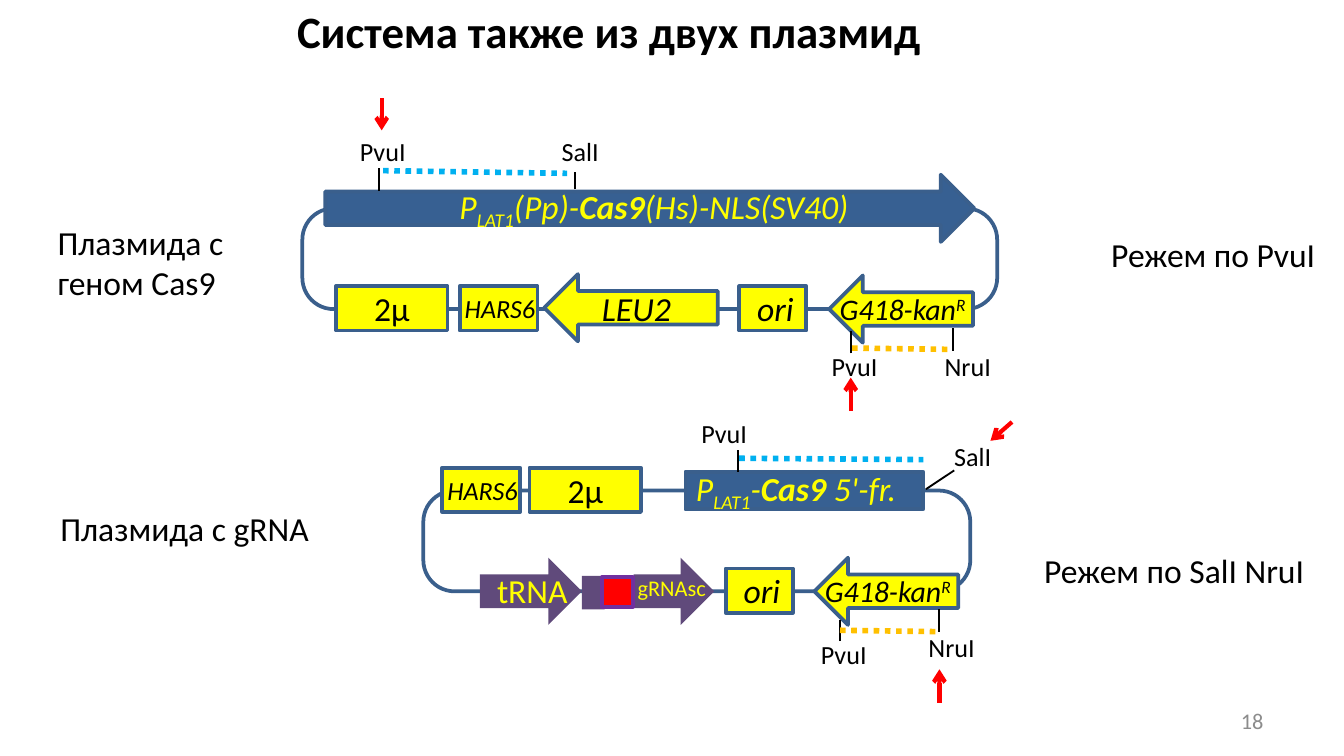
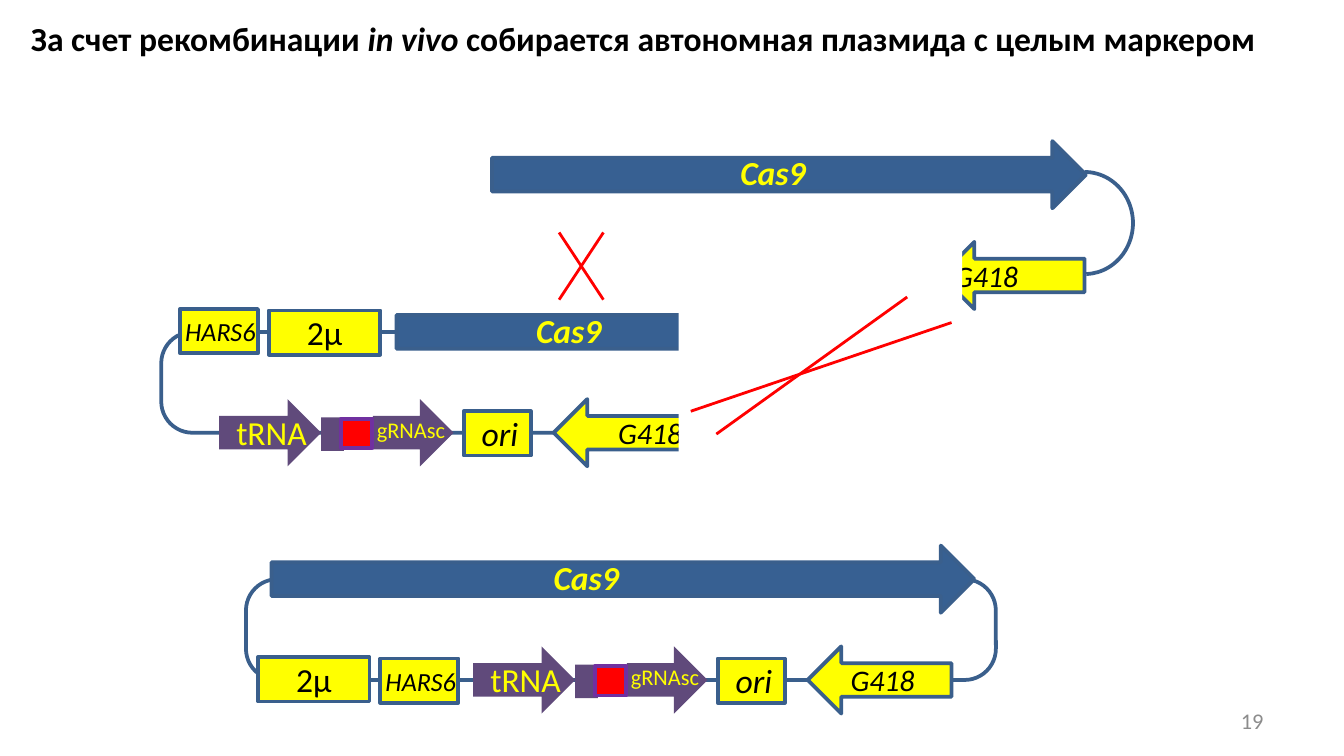
from typing import NamedTuple, Optional

from lxml.etree import SubElement
from pptx import Presentation
from pptx.dml.color import RGBColor
from pptx.enum.dml import MSO_LINE
from pptx.enum.shapes import MSO_CONNECTOR, MSO_SHAPE
from pptx.enum.text import MSO_ANCHOR, MSO_AUTO_SIZE, PP_ALIGN
from pptx.oxml.ns import qn
from pptx.util import Inches, Pt

# The slide is a grid of 100 columns by 56.25 rows; all lengths count its cells.
COLUMNS, ROWS = 100, 56.25
CELL = Inches(10) / COLUMNS

FONT = "Calibri"
BLACK = RGBColor(0x00, 0x00, 0x00)
WHITE = RGBColor(0xFF, 0xFF, 0xFF)
GREY = RGBColor(0x8C, 0x8C, 0x8C)
RED = RGBColor(0xFF, 0x00, 0x00)
YELLOW = RGBColor(0xFF, 0xFF, 0x00)
BLUE = RGBColor(0x37, 0x60, 0x92)
OUTLINE = RGBColor(0x3A, 0x5F, 0x8C)
PURPLE = RGBColor(0x60, 0x4A, 0x7B)
VIOLET = RGBColor(0x70, 0x30, 0xA0)
SKY = RGBColor(0x00, 0xB0, 0xF0)
ORANGE = RGBColor(0xFF, 0xC0, 0x00)

ARROW_HEIGHT = 5
BOX_HEIGHT = 3.3
RING_HEIGHT = 7.5
SITE_WIDTHS = {"PvuI": 5.5, "NruI": 5.5, "SalI": 4.8}


class Run(NamedTuple):
    text: str
    bold: Optional[bool] = None
    italic: Optional[bool] = None
    baseline: int = 0  # percent, negative for subscript


def cells(*counts):
    return [round(count * CELL) for count in counts]


def write(frame, text, size, color=BLACK, bold=False, italic=False, align=PP_ALIGN.LEFT):
    """Fill a frame's paragraph with a string or a list of Runs."""
    paragraph = frame.paragraphs[0]
    paragraph.alignment = align
    font = paragraph.font
    font.name, font.size, font.bold, font.italic = FONT, Pt(size), bold, italic
    font.color.rgb = color
    for part in [Run(text)] if isinstance(text, str) else text:
        run = paragraph.add_run()
        run.text = part.text
        run.font.bold, run.font.italic = part.bold, part.italic
        if part.baseline:
            run._r.get_or_add_rPr().set("baseline", str(part.baseline * 1000))


def add_label(slide, text, left, top, width, height=4, size=18, wrap=False, **style):
    box = slide.shapes.add_textbox(*cells(left, top, width, height))
    frame = box.text_frame
    frame.word_wrap = wrap
    frame.auto_size = MSO_AUTO_SIZE.SHAPE_TO_FIT_TEXT
    write(frame, text, size, **style)


def add_title(slide, text, left, top, width, height, size):
    title = slide.shapes.title
    title.left, title.top, title.width, title.height = cells(left, top, width, height)
    title.text_frame.vertical_anchor = MSO_ANCHOR.TOP
    title.text_frame.auto_size = MSO_AUTO_SIZE.NONE
    write(title.text_frame, text, size, bold=True)


def add_slide_number(slide, number):
    box = slide.shapes.add_textbox(*cells(71.7, 52.1, 23.3, 3))
    box.text_frame.word_wrap = True
    box.text_frame.vertical_anchor = MSO_ANCHOR.MIDDLE
    write(box.text_frame, str(number), 12, GREY, align=PP_ALIGN.RIGHT)


def add_figure(slide, preset, left, top, width, height, fill=None, line=OUTLINE):
    figure = slide.shapes.add_shape(preset, *cells(left, top, width, height))
    figure.shadow.inherit = False
    if fill is None:
        figure.fill.background()
    else:
        figure.fill.solid()
        figure.fill.fore_color.rgb = fill
    if line is None:
        figure.line.fill.background()
    else:
        figure.line.color.rgb = line
        figure.line.width = Pt(2)
    return figure


def add_line(slide, start, end, color=BLACK, width=1.0, dash=None, arrow=False):
    connector = slide.shapes.add_connector(MSO_CONNECTOR.STRAIGHT, *cells(*start, *end))
    connector.line.color.rgb = color
    connector.line.width = Pt(width)
    if dash:
        connector.line.dash_style = dash
    properties = connector._element.spPr
    if arrow:
        SubElement(properties.get_or_add_ln(), qn("a:tailEnd"), type="arrow")
    SubElement(properties, qn("a:effectLst"))


def add_ring(slide, left, top, width):
    ring = add_figure(slide, MSO_SHAPE.ROUNDED_RECTANGLE, left, top, width, RING_HEIGHT)
    ring.adjustments[0] = 0.311


def add_cas9_arrow(slide, left, top, width, text, text_left, text_width, bold=True):
    add_figure(slide, MSO_SHAPE.RIGHT_ARROW, left, top, width, ARROW_HEIGHT, BLUE)
    add_label(slide, text, text_left, top + 0.35, text_width,
              color=YELLOW, bold=bold, italic=True)


def add_two_micron(slide, left, top):
    add_figure(slide, MSO_SHAPE.RECTANGLE, left, top, 8.3, BOX_HEIGHT, YELLOW)
    add_label(slide, "2μ", left + 1.85, top - 0.35, 5.2)


def add_hars6(slide, left, top):
    add_figure(slide, MSO_SHAPE.RECTANGLE, left, top, 5.8, BOX_HEIGHT, YELLOW)
    add_label(slide, "HARS6", left - 0.6, top, 7.3, 3.4, size=14, italic=True)


def add_ori(slide, left, top):
    add_figure(slide, MSO_SHAPE.RECTANGLE, left, top, 5, BOX_HEIGHT, YELLOW)
    add_label(slide, "ori", left + 0.35, top - 0.4, 4.8, italic=True)


def add_g418(slide, left, top, text="G418", shift=0.0, text_width=6.9):
    add_figure(slide, MSO_SHAPE.LEFT_ARROW, left, top, 10.7, ARROW_HEIGHT, YELLOW)
    add_label(slide, text, left + shift, top + 0.65, text_width, 3.7, size=16, italic=True)


def add_guide_rna(slide, left, top):
    """tRNA arrow, red target segment and scaffold arrow, side by side."""
    add_figure(slide, MSO_SHAPE.RIGHT_ARROW, left, top, 7.6, ARROW_HEIGHT, PURPLE, None)
    add_figure(slide, MSO_SHAPE.RIGHT_ARROW, left + 11.45, top, 6, ARROW_HEIGHT, PURPLE, None)
    add_label(slide, "tRNA", left + 0.3, top + 0.45, 7.3, color=YELLOW)
    add_label(slide, "gRNAsc", left + 10.75, top + 0.75, 7.2, 3, size=12, color=YELLOW)
    add_figure(slide, MSO_SHAPE.RECTANGLE, left + 7.6, top + 1.35, 1.7, 2.5, PURPLE, None)
    add_figure(slide, MSO_SHAPE.RECTANGLE, left + 9.1, top + 1.45, 2.3, 2.2, RED, VIOLET)


def add_site(slide, name, left, top, tick_start, tick_end):
    """Restriction site: its name and the tick that leads to the map."""
    add_line(slide, tick_start, tick_end)
    add_label(slide, name, left, top, SITE_WIDTHS[name], 3.4, size=14)


def build_two_plasmids(slide):
    add_title(slide, "Система также из двух плазмид", 21.1, -0.2, 52, 5, 24)
    kan_marker = [Run("G418-kan"), Run("R", baseline=30)]

    # Plasmid with the Cas9 gene
    add_ring(slide, 22.5, 15.5, 51.7)
    promoter = [Run("P"), Run("LAT1", baseline=-25)]
    add_cas9_arrow(slide, 24.2, 13, 48.3,
                   promoter + [Run("(Pp)-"), Run("Cas9", bold=True), Run("(Hs)-NLS(SV40)")],
                   33.2, 32.3, bold=False)
    add_two_micron(slide, 25, 21.3)
    add_hars6(slide, 34.2, 21.3)
    add_figure(slide, MSO_SHAPE.LEFT_ARROW, 40.5, 20.4, 12.9, ARROW_HEIGHT, YELLOW)
    add_label(slide, "LEU2", 43.8, 20.9, 7.2, italic=True)
    add_ori(slide, 55, 21.3)
    add_g418(slide, 61.7, 20.5, kan_marker, -0.2, 12)

    # Plasmid with gRNA
    add_ring(slide, 31.5, 36.5, 40.7)
    add_figure(slide, MSO_SHAPE.RECTANGLE, 51, 35.1, 17.7, 2.8, BLUE)
    add_label(slide, promoter + [Run("-"), Run("Cas9 ", bold=True), Run("5'-fr.")],
              50.8, 34.3, 18.1, color=YELLOW, italic=True)
    add_hars6(slide, 32.9, 34.8)
    add_two_micron(slide, 39.4, 34.8)
    add_guide_rna(slide, 35.7, 41.5)
    add_ori(slide, 54, 42.3)
    add_g418(slide, 60.6, 41.5, kan_marker, -0.2, 12)

    for name, left, top, tick_start, tick_end in [
        ("PvuI", 25.8, 9.6, (28.2, 14.2), (28.2, 12.5)),
        ("SalI", 40.8, 9.6, (42.8, 14.1), (42.8, 12.8)),
        ("PvuI", 60.9, 25.6, (63.3, 26.3), (63.3, 24.6)),
        ("NruI", 69.3, 25.6, (70.9, 26.1), (70.9, 24.4)),
        ("PvuI", 51.2, 30.6, (54.9, 35.1), (54.9, 33.5)),
        ("SalI", 70, 32.3, (68.9, 36.4), (71, 35)),
        ("PvuI", 60.1, 47, (62.5, 47.7), (62.5, 46.1)),
        ("NruI", 68.1, 46.5, (69.9, 47), (69.9, 45.3)),
    ]:
        add_site(slide, name, left, top, tick_start, tick_end)

    cuts = [((28.4, 7.3), (28.4, 9.7)), ((63.3, 30.6), (63.3, 28.1)),
            ((69.9, 52.3), (69.9, 49.8)), ((75.3, 31.4), (73.7, 32.8))]
    for start, end in cuts:
        add_line(slide, start, end, RED, 2.25, arrow=True)

    homologies = [((28.5, 12.7), (42.2, 12.9), SKY), ((55, 34.1), (68.7, 34.2), SKY),
                  ((63.4, 25.9), (70.9, 26), ORANGE), ((62.5, 46.9), (69.9, 47), ORANGE)]
    for start, end, color in homologies:
        add_line(slide, start, end, color, 3, dash=MSO_LINE.ROUND_DOT)

    add_label(slide, "Плазмида с геном Cas9", 3.3, 16, 15, 7.1, wrap=True)
    add_label(slide, "Плазмида с gRNA", 3.5, 37.3, 22.5, wrap=True)
    add_label(slide, "Режем по PvuI", 81.7, 16.9, 17.4)
    add_label(slide, "Режем по SalI NruI", 76.7, 40.4, 21.6)


def build_recombination(slide):
    add_title(slide, [Run("За счет рекомбинации "), Run("in vivo ", italic=True),
                      Run("собирается автономная плазмида с целым маркером")],
              1.3, 0.8, 96.2, 4, 18)

    # Cut plasmid with the Cas9 gene
    add_cas9_arrow(slide, 36.6, 10.5, 44.2, "Cas9", 54.1, 7.5)
    add_g418(slide, 70, 18)
    bend = add_figure(slide, MSO_SHAPE.ARC, 77.1, 12.8, 7.2, 7.6)
    bend.adjustments[0], bend.adjustments[1] = 162, 52.85

    # Cut plasmid with gRNA
    add_ring(slide, 12, 24.7, 40.7)
    add_cas9_arrow(slide, 29.5, 22.2, 24.1, "Cas9", 38.9, 6.9)
    add_hars6(slide, 13.4, 23)
    add_two_micron(slide, 20, 23.1)
    add_guide_rna(slide, 16.3, 29.7)
    add_ori(slide, 34.5, 30.6)
    add_g418(slide, 41.2, 29.7, shift=3.8)

    # White blocks that trim the cut ends
    for left, top, width, height in [(69.1, 18.6, 2.5, 3.9), (50.5, 21.9, 4.2, 12.9)]:
        add_figure(slide, MSO_SHAPE.RECTANGLE, left, top, width, height, WHITE, None)

    crossovers = [((41.6, 17.3), (44.9, 22.3)), ((41.6, 22.3), (44.9, 17.3)),
                  ((67.5, 22.1), (53.3, 32.3)), ((51.4, 30.6), (70.8, 24))]
    for start, end in crossovers:
        add_line(slide, start, end, RED, 1.5)

    # Assembled plasmid
    add_ring(slide, 18.3, 43.1, 55.8)
    add_cas9_arrow(slide, 20.2, 40.6, 52.3, "Cas9", 40.2, 6.9)
    add_two_micron(slide, 19.2, 48.9)
    add_hars6(slide, 28.3, 49)
    add_guide_rna(slide, 35.2, 48.1)
    add_ori(slide, 53.4, 49)
    add_g418(slide, 60.1, 48.1, shift=2.2)


def main():
    presentation = Presentation()
    presentation.slide_width, presentation.slide_height = cells(COLUMNS, ROWS)
    title_only = presentation.slide_layouts[5]
    for number, build in enumerate([build_two_plasmids, build_recombination], start=18):
        slide = presentation.slides.add_slide(title_only)
        build(slide)
        add_slide_number(slide, number)
    presentation.save("out.pptx")


if __name__ == "__main__":
    main()
